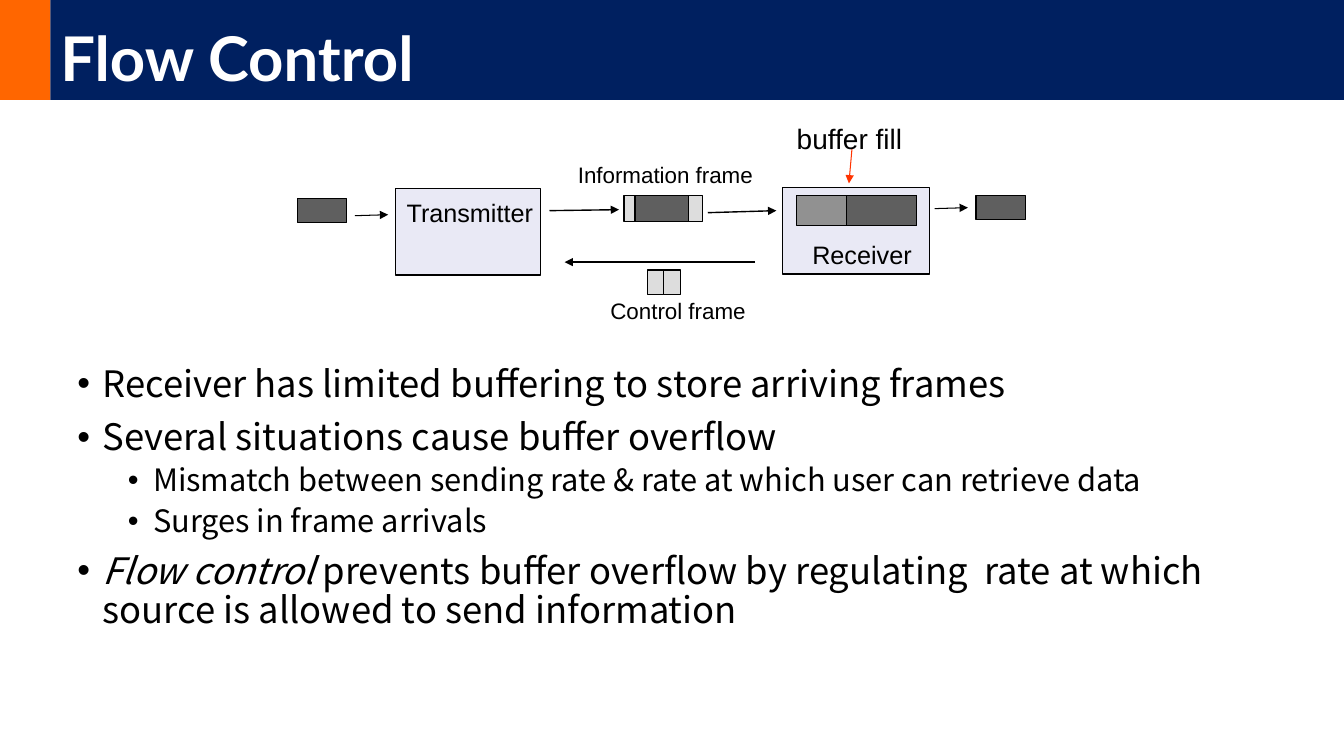
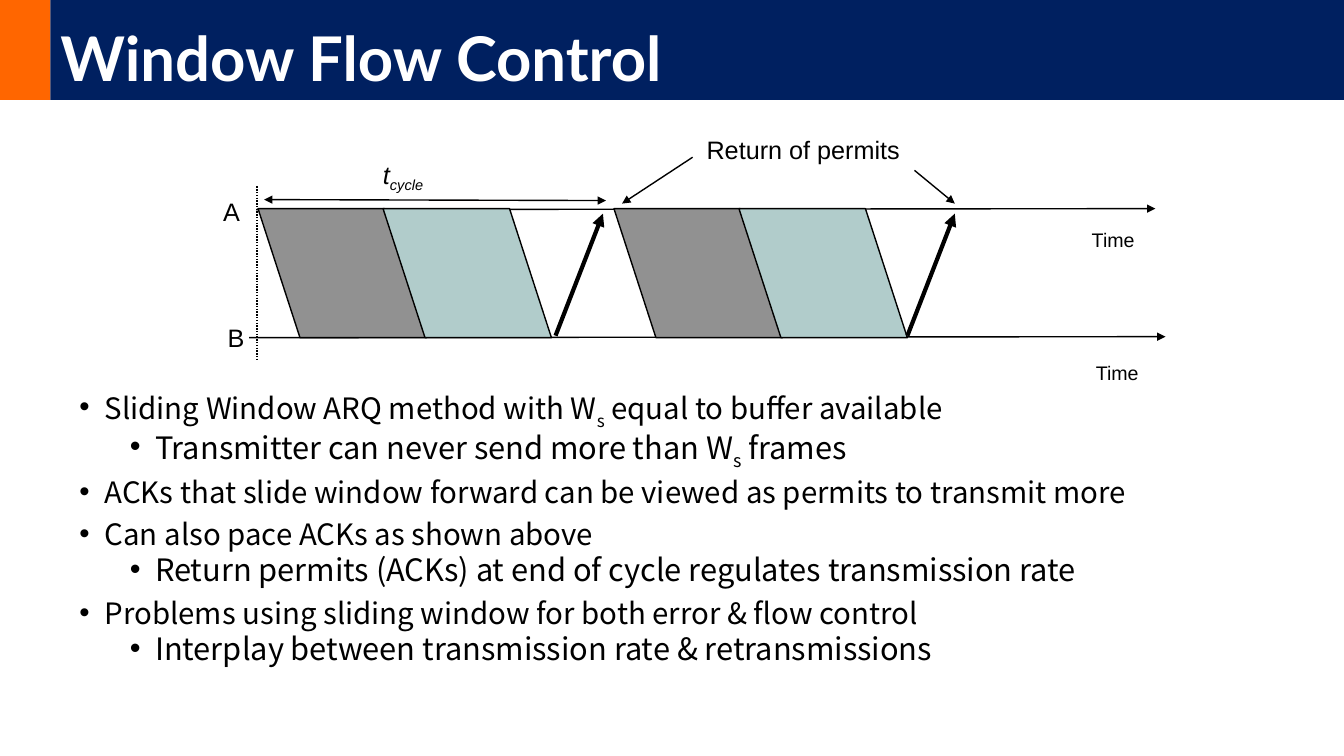
"""Build two slides on flow control."""
from dataclasses import dataclass

import lxml.etree
import pptx
import pptx.dml.color
import pptx.enum.dml
import pptx.enum.shapes
import pptx.enum.text
import pptx.oxml.ns
import pptx.shapes.autoshape
import pptx.slide
import pptx.text.text
import pptx.util

Inches = pptx.util.Inches
Pt = pptx.util.Pt
Color = pptx.dml.color.RGBColor
Slide = pptx.slide.Slide
Shape = pptx.shapes.autoshape.Shape
Kind = pptx.enum.shapes.MSO_SHAPE
Align = pptx.enum.text.PP_ALIGN
Anchor = pptx.enum.text.MSO_ANCHOR
qn = pptx.oxml.ns.qn

ORANGE = Color(0xFF, 0x66, 0x00)
NAVY = Color(0x00, 0x20, 0x60)
WHITE = Color(0xFF, 0xFF, 0xFF)
BLACK = Color(0x00, 0x00, 0x00)
RED = Color(0xFF, 0x33, 0x00)
PALE = Color(0xE9, 0xE9, 0xF5)
LIGHT = Color(0xDD, 0xDD, 0xDD)
GRAY = Color(0x91, 0x91, 0x91)
DARK = Color(0x5F, 0x5F, 0x5F)
TEAL = Color(0xB1, 0xCC, 0xCB)

HEAD_FONT = "Lato"
BODY_FONT = "Noto Sans CJK KR"
LABEL_FONT = "Arial"
WIDE, HIGH = 13.33, 7.5
BAND, EDGE = 0.99, 0.5


@dataclass(frozen=True)
class Run:
    text: str
    slant: bool = False
    base: int = 0


@dataclass(frozen=True)
class Point:
    size: float
    runs: tuple[Run, ...]
    level: int = 0


@dataclass(frozen=True)
class Box:
    x: float
    y: float
    w: float
    h: float
    fill: Color
    line: float = 1


@dataclass(frozen=True)
class Line:
    x1: float
    y1: float
    x2: float
    y2: float
    width: float = 1
    color: Color = BLACK
    ends: tuple[str, ...] = ("tailEnd",)
    dots: bool = False


@dataclass(frozen=True)
class Label:
    x: float
    y: float
    w: float
    h: float
    runs: tuple[Run, ...]
    size: float = 18
    align: Align = Align.LEFT
    wrap: bool = False


def write(para: pptx.text.text._Paragraph, text: str, *, size: float,
          font: str, color: Color = BLACK, bold: bool = False,
          slant: bool = False, base: int = 0) -> None:
    """Add one run of formatted text."""
    run = para.add_run()
    run.text = text
    run.font.size = Pt(size)
    run.font.name = font
    run.font.color.rgb = color
    run.font.bold = bold
    run.font.italic = slant
    if base:
        run._r.get_or_add_rPr().set("baseline", str(base * 1000))


def draw_box(slide: Slide, box: Box, kind: Kind = Kind.RECTANGLE) -> Shape:
    """Draw a filled shape, outlined when its line has a width."""
    shape = slide.shapes.add_shape(
        kind, Inches(box.x), Inches(box.y), Inches(box.w), Inches(box.h))
    shape.shadow.inherit = False
    shape.fill.solid()
    shape.fill.fore_color.rgb = box.fill
    if box.line:
        shape.line.color.rgb = BLACK
        shape.line.width = Pt(box.line)
    else:
        shape.line.fill.background()
    return shape


def draw_frame(slide: Slide, box: Box) -> None:
    """Draw a frame in transit, leaning toward later time."""
    shape = draw_box(slide, box, Kind.PARALLELOGRAM)
    shape.adjustments[0] = 0.325
    shape.element.spPr.find(qn("a:xfrm")).set("flipH", "1")


def draw_line(slide: Slide, line: Line) -> None:
    """Draw a straight line with its arrowheads."""
    link = slide.shapes.add_connector(
        pptx.enum.shapes.MSO_CONNECTOR.STRAIGHT, Inches(line.x1),
        Inches(line.y1), Inches(line.x2), Inches(line.y2))
    link.line.color.rgb = line.color
    link.line.width = Pt(line.width)
    if line.dots:
        link.line.dash_style = pptx.enum.dml.MSO_LINE.ROUND_DOT
    stroke = link.line._get_or_add_ln()
    for end in line.ends:
        lxml.etree.SubElement(stroke, qn(f"a:{end}")).set("type", "triangle")
    lxml.etree.SubElement(link.element.spPr, qn("a:effectLst"))


def draw_label(slide: Slide, label: Label) -> None:
    """Draw a diagram label."""
    area = slide.shapes.add_textbox(
        Inches(label.x), Inches(label.y), Inches(label.w), Inches(label.h))
    area.text_frame.word_wrap = label.wrap
    para = area.text_frame.paragraphs[0]
    para.alignment = label.align
    for run in label.runs:
        write(para, run.text, size=label.size, font=LABEL_FONT,
              slant=run.slant, base=run.base)


def draw_points(slide: Slide, x: float, y: float, w: float, h: float,
                points: list[Point], space: float) -> None:
    """Draw a bulleted list on two levels."""
    area = slide.shapes.add_textbox(Inches(x), Inches(y), Inches(w), Inches(h))
    frame = area.text_frame
    frame.word_wrap = True
    for i, point in enumerate(points):
        para = frame.add_paragraph() if i else frame.paragraphs[0]
        para.level = point.level
        para.line_spacing = space
        para.space_before = Pt(5 if point.level else 10)
        props = para._p.get_or_add_pPr()
        props.set("marL", str(Inches(0.25 + 0.5 * point.level)))
        props.set("indent", str(Inches(-0.25)))
        lxml.etree.SubElement(props, qn("a:buFont")).set("typeface", LABEL_FONT)
        lxml.etree.SubElement(props, qn("a:buChar")).set("char", "•")
        for run in point.runs:
            write(para, run.text, size=point.size, font=BODY_FONT,
                  slant=run.slant, base=run.base)


def start_slide(deck: pptx.presentation.Presentation, title: str) -> Slide:
    """Add a blank slide with the title band."""
    slide = deck.slides.add_slide(deck.slide_layouts[6])
    draw_box(slide, Box(0, 0, EDGE, BAND, ORANGE, 0))
    band = draw_box(slide, Box(EDGE, 0, WIDE - EDGE, BAND, NAVY, 0))
    band.text_frame.vertical_anchor = Anchor.BOTTOM
    band.text_frame.word_wrap = True
    para = band.text_frame.paragraphs[0]
    para.alignment = Align.LEFT
    para.line_spacing = 0.9
    write(para, title, size=44, font=HEAD_FONT, color=WHITE, bold=True)
    return slide


def build_flow(deck: pptx.presentation.Presentation) -> None:
    """Build the slide on buffers."""
    slide = start_slide(deck, "Flow Control")
    draw_points(slide, 0.67, 3.58, 12.14, 3.79, [
        Point(26, (Run("Receiver has limited buffering to store arriving frames"),)),
        Point(26, (Run("Several situations cause buffer overflow"),)),
        Point(22, (Run("Mismatch between sending rate & rate at which user "
                       "can retrieve data"),), 1),
        Point(22, (Run("Surges in frame arrivals"),), 1),
        Point(26, (Run("Flow control", slant=True),
                   Run(" prevents buffer overflow by regulating  rate at which "
                       "source is allowed to send information"))),
    ], 0.9)
    for box in (
        Box(6.19, 1.94, 0.78, 0.26, LIGHT),
        Box(6.3, 1.94, 0.53, 0.26, DARK),
        Box(3.92, 1.87, 1.44, 0.86, PALE),
        Box(7.76, 1.86, 1.46, 0.86, PALE),
        Box(6.42, 2.68, 0.17, 0.24, LIGHT),
        Box(6.58, 2.68, 0.17, 0.24, LIGHT),
        Box(7.9, 1.94, 1.19, 0.3, GRAY, 0.75),
        Box(8.4, 1.94, 0.69, 0.3, DARK, 0.75),
        Box(2.95, 1.97, 0.49, 0.24, DARK, 0.75),
        Box(9.68, 1.94, 0.49, 0.24, DARK, 0.75),
    ):
        draw_box(slide, box)
    for line in (
        Line(5.45, 2.09, 6.14, 2.08),
        Line(7.02, 2.11, 7.7, 2.09),
        Line(7.49, 2.6, 5.6, 2.6),
        Line(8.45, 1.48, 8.42, 1.82, 0.75, RED),
        Line(3.52, 2.14, 3.85, 2.13, 0.75),
        Line(9.27, 2.07, 9.6, 2.06, 0.75),
    ):
        draw_line(slide, line)
    for label in (
        Label(5.43, 1.55, 2.34, 0.36, (Run("Information frame"),), 16,
              Align.CENTER, True),
        Label(5.67, 2.9, 2.11, 0.36, (Run("Control frame"),), 16,
              Align.CENTER, True),
        Label(3.93, 1.91, 1.46, 0.4, (Run("Transmitter"),), align=Align.CENTER),
        Label(7.95, 2.33, 1.2, 0.4, (Run("Receiver"),), align=Align.CENTER),
        Label(7.8, 1.16, 1.25, 0.43, (Run("buffer fill"),), 20, Align.CENTER),
    ):
        draw_label(slide, label)


def build_window(deck: pptx.presentation.Presentation) -> None:
    """Build the slide on permits and cycles."""
    slide = start_slide(deck, "Window Flow Control")
    draw_line(slide, Line(2.54, 2.08, 11.46, 2.07))
    draw_line(slide, Line(2.47, 3.35, 11.56, 3.34))
    draw_line(slide, Line(2.55, 1.85, 2.55, 3.58, ends=(), dots=True))
    for start in (2.56, 6.09):
        for i, fill in enumerate((GRAY, TEAL)):
            draw_frame(slide, Box(start + 1.24 * i, 2.07, 1.67, 1.28, fill))
    for foot in (5.51, 9):
        draw_line(slide, Line(foot, 3.33, foot + 0.47, 2.12, 3))
    draw_line(slide, Line(2.62, 1.98, 6.01, 1.99, ends=("headEnd", "tailEnd")))
    draw_line(slide, Line(6.87, 1.56, 6.17, 2.02))
    draw_line(slide, Line(9.07, 1.69, 9.47, 2.02))
    for label in (
        Label(2.06, 1.9, 0.43, 0.4, (Run(" A"),)),
        Label(2.09, 3.15, 0.44, 0.4, (Run(" B"),)),
        Label(3.7, 1.53, 0.96, 0.4,
              (Run("t", True), Run("cycle", True, -25)), wrap=True),
        Label(6.91, 1.28, 2.14, 0.4, (Run("Return of permits"),)),
        Label(10.73, 2.21, 0.63, 0.33, (Run("Time"),), 14),
        Label(10.77, 3.53, 0.63, 0.33, (Run("Time"),), 14),
    ):
        draw_label(slide, label)
    sub = Run("s", base=-25)
    draw_points(slide, 0.69, 3.86, 11.97, 3.23, [
        Point(21, (Run("Sliding Window ARQ method with W"), sub,
                   Run(" equal to buffer available"))),
        Point(22, (Run("Transmitter can never send more than W"), sub,
                   Run(" frames")), 1),
        Point(21, (Run("ACKs that slide window forward can be viewed as "
                       "permits to transmit more"),)),
        Point(21, (Run("Can also pace ACKs as shown above"),)),
        Point(22, (Run("Return permits (ACKs) at end of cycle regulates "
                       "transmission rate"),), 1),
        Point(21, (Run("Problems using sliding window for both error & "
                       "flow control"),)),
        Point(22, (Run("Interplay between transmission rate & "
                       "retransmissions"),), 1),
    ], 0.8)


def main() -> None:
    """Build and save the deck."""
    deck = pptx.Presentation()
    deck.slide_width = Inches(WIDE)
    deck.slide_height = Inches(HIGH)
    build_flow(deck)
    build_window(deck)
    deck.save("out.pptx")


if __name__ == "__main__":
    main()
